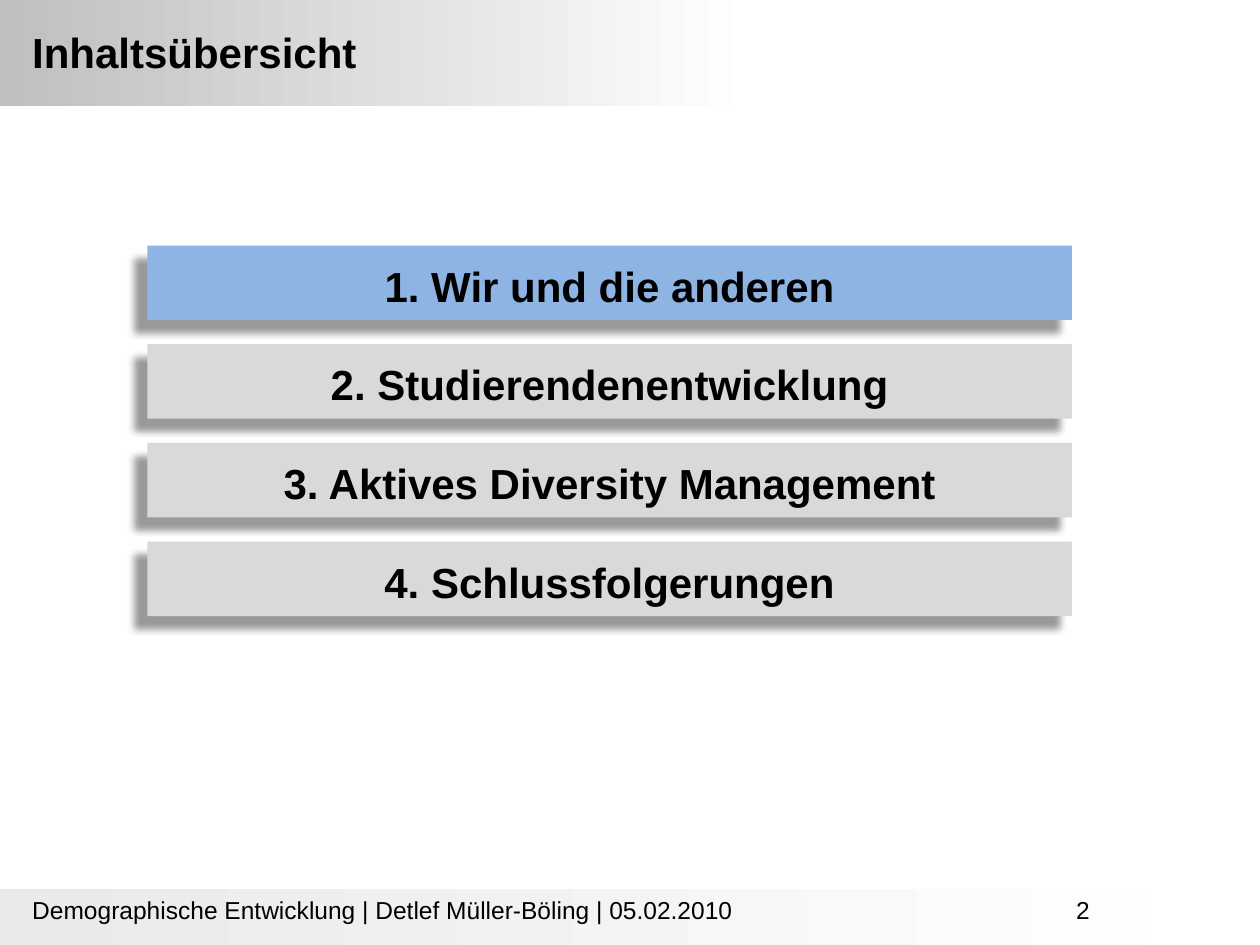
import pptx
import pptx.dml.color
import pptx.enum.shapes
import pptx.enum.text
import pptx.oxml
import pptx.oxml.ns
import pptx.util
from dataclasses import dataclass

Cm = pptx.util.Cm
ALIGN = pptx.enum.text.PP_ALIGN
ANCHOR = pptx.enum.text.MSO_ANCHOR


@dataclass(frozen=True)
class Theme:
    font: str = "Arial"
    text: str = "000000"
    active: str = "8EB4E3"
    inactive: str = "D9D9D9"
    paper: str = "FFFFFF"
    header: str = "BFBFBF"
    footer: str = "EAEAEA"
    heading_size: int = 24
    footer_size: int = 14


THEME = Theme()
SLIDE_W, SLIDE_H = 25.4, 19.05
CHAPTERS = [
    "1. Wir und die anderen",
    "2. Studierendenentwicklung",
    "3. Aktives Diversity Management",
    "4. Schlussfolgerungen",
]


def rgb(value):
    return pptx.dml.color.RGBColor.from_string(value)


def write(tf, text, size, bold=False, align=ALIGN.LEFT, anchor=ANCHOR.TOP, spacing=None):
    """Put one formatted paragraph into a text frame."""
    tf.word_wrap = True
    tf.vertical_anchor = anchor
    p = tf.paragraphs[0]
    p.alignment = align
    p.line_spacing = spacing
    r = p.add_run()
    r.text = text
    r.font.name = THEME.font
    r.font.size = pptx.util.Pt(size)
    r.font.bold = bold
    r.font.color.rgb = rgb(THEME.text)


def add_rect(s, x, y, w, h):
    sp = s.shapes.add_shape(pptx.enum.shapes.MSO_SHAPE.RECTANGLE, Cm(x), Cm(y), Cm(w), Cm(h))
    sp.shadow.inherit = False
    sp.line.fill.background()
    return sp


def add_band(s, y, h, color, white_until=0):
    """Full-width band fading from its colour on the left to white."""
    fill = add_rect(s, 0, y, SLIDE_W, h).fill
    fill.gradient()
    fill.gradient_angle = 180
    stops = [(white_until, THEME.paper), (1, color)]
    for stop, (position, value) in zip(fill.gradient_stops, stops):
        stop.position = position
        stop.color.rgb = rgb(value)


def add_shadow(sp):
    """Soft shadow to the lower left."""
    effects = sp._element.spPr.find(pptx.oxml.ns.qn("a:effectLst"))
    effects.append(pptx.oxml.parse_xml(
        f'<a:outerShdw {pptx.oxml.ns.nsdecls("a")} blurRad="50800" dist="127000" '
        'dir="8100000" algn="tr" rotWithShape="0">'
        '<a:srgbClr val="000000"><a:alpha val="40000"/></a:srgbClr></a:outerShdw>'))


def add_chapter(s, y, text, color):
    sp = add_rect(s, 2.97, y, 18.64, 1.5)
    sp.fill.solid()
    sp.fill.fore_color.rgb = rgb(color)
    add_shadow(sp)
    write(sp.text_frame, text, THEME.heading_size, bold=True,
          align=ALIGN.CENTER, anchor=ANCHOR.MIDDLE, spacing=1.1)


def add_text(s, x, y, w, h, text, size, **fmt):
    sp = s.shapes.add_textbox(Cm(x), Cm(y), Cm(w), Cm(h))
    write(sp.text_frame, text, size, **fmt)


def main():
    prs = pptx.Presentation()
    prs.slide_width, prs.slide_height = Cm(SLIDE_W), Cm(SLIDE_H)
    s = prs.slides.add_slide(prs.slide_layouts[6])

    # Header and footer bands
    add_band(s, 0, 2.13, THEME.header, white_until=0.4)
    add_band(s, 17.93, 1.12, THEME.footer)

    # Title
    add_text(s, 0.4, 0.4, 19.05, 1.78, "Inhaltsübersicht", THEME.heading_size, bold=True)

    # Chapters, the current one highlighted
    for i, chapter in enumerate(CHAPTERS):
        add_chapter(s, 4.95 + i * 1.99, chapter, THEME.inactive if i else THEME.active)

    # Footer text and page number
    add_text(s, 0.4, 17.91, 17.4, 1.32,
             "Demographische Entwicklung | Detlef Müller-Böling | 05.02.2010", THEME.footer_size)
    add_text(s, 18.87, 17.91, 5.92, 1.32, "2", THEME.footer_size, align=ALIGN.CENTER)

    prs.save("out.pptx")


if __name__ == "__main__":
    main()
